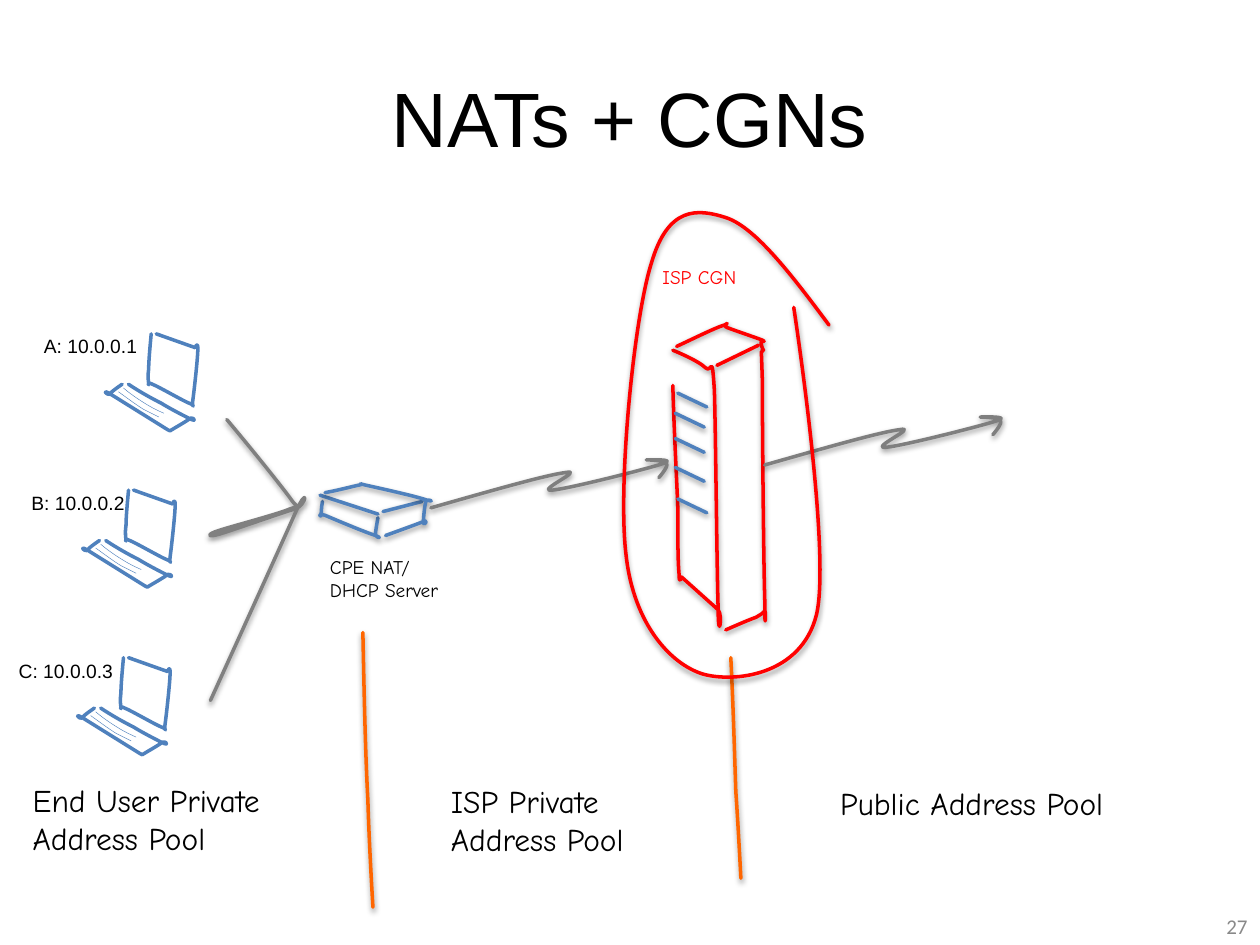
import pptx
import pptx.util
import pptx.dml.color
import pptx.enum.text
import pptx.oxml
import pptx.oxml.ns

PX = 9144
BLUE = "4F81BD"
RED = "FF0000"
GREY = "808080"
ORANGE = "FF6600"
BLACK = "000000"
color = pptx.dml.color.RGBColor.from_string
qn = pptx.oxml.ns.qn
NAMESPACE = pptx.oxml.ns.nsdecls("a")
SHADOW = (
    f'<a:outerShdw {NAMESPACE} blurRad="40000" dist="20000" dir="5400000" rotWithShape="0">'
    '<a:srgbClr val="000000"><a:alpha val="38000"/></a:srgbClr></a:outerShdw>'
)


def sketch(shapes, start, segments, ink, offset=(0, 0), weight=2, shadow=True):
    dx, dy = offset
    points = []
    for segment in segments:
        points += [(x + dx, y + dy) for x, y in zip(segment[::2], segment[1::2])]
    builder = shapes.build_freeform(start[0] + dx, start[1] + dy, scale=PX)
    builder.add_line_segments(points, close=False)
    stroke = builder.convert_to_shape()
    stroke.fill.background()
    stroke.line.color.rgb = color(ink)
    stroke.line.width = pptx.util.Pt(weight)
    stroke.shadow.inherit = False
    properties = stroke.element.spPr
    outline = properties.find(qn("a:ln"))
    outline.set("cap", "rnd")
    outline.append(pptx.oxml.parse_xml(f"<a:round {NAMESPACE}/>"))
    if shadow:
        properties.find(qn("a:effectLst")).append(pptx.oxml.parse_xml(SHADOW))
    steps = iter(list(properties.iter(qn("a:lnTo"))))
    for segment in segments:
        step = next(steps)
        if len(segment) == 6:
            curve = pptx.oxml.parse_xml(f"<a:cubicBezTo {NAMESPACE}/>")
            step.addprevious(curve)
            for handle in (step, next(steps), next(steps)):
                curve.append(handle[0])
                handle.getparent().remove(handle)


def write(box, lines, size, font, ink, align=pptx.enum.text.PP_ALIGN.LEFT, wrap=True):
    frame = box.text_frame
    frame.word_wrap = wrap
    for index, line in enumerate(lines):
        para = frame.add_paragraph() if index else frame.paragraphs[0]
        para.alignment = align
        span = para.add_run()
        span.text = line
        span.font.size = pptx.util.Pt(size)
        span.font.name = font
        span.font.color.rgb = color(ink)


deck = pptx.Presentation()
deck.slide_width = 1000 * PX
deck.slide_height = 750 * PX
page = deck.slides.add_slide(deck.slide_layouts[5])

title = page.shapes.title
title.left, title.top, title.width, title.height = 29 * PX, 30 * PX, 942 * PX, 125 * PX
title.text_frame.vertical_anchor = pptx.enum.text.MSO_ANCHOR.MIDDLE
write(title, ["NATs + CGNs"], 44, "Arial", BLACK, pptx.enum.text.PP_ALIGN.CENTER)

number = page.shapes.add_textbox(767 * PX, 715 * PX, 233 * PX, 40 * PX)
number.text_frame.vertical_anchor = pptx.enum.text.MSO_ANCHOR.MIDDLE
write(number, ["27"], 12, "Calibri", "898989", pptx.enum.text.PP_ALIGN.RIGHT)

laptop_strokes = [
    ((120, 265), [(119, 276, 118, 287, 118, 293), (117, 300, 118, 303, 118, 305),
                  (119, 307, 115, 302, 121, 305), (126, 307, 145, 318, 150, 320),
                  (156, 322, 152, 325, 153, 318), (154, 311, 157, 284, 157, 277),
                  (157, 270, 155, 276, 155, 276), (124, 265), (127, 266)], 2),
    ((102, 305), [(111, 311, 120, 316, 128, 320), (136, 325, 148, 331, 152, 333),
                  (156, 335, 154, 331, 151, 332), (149, 334, 138, 340, 135, 342),
                  (133, 341), (88, 313), (80, 308, 85, 314, 87, 313),
                  (88, 311, 97, 305, 97, 305)], 2),
    ((94, 311), [(101, 316, 109, 322, 114, 325), (120, 328, 126, 331, 126, 331)], 0.25),
    ((98, 308), [(105, 314, 113, 319, 118, 322), (123, 325, 130, 328, 130, 328)], 0.25),
]
for offset in [(-18, 124), (-22, 257), (0, 0)]:
    laptop = page.shapes.add_group_shape()
    for start, segments, weight in laptop_strokes:
        sketch(laptop.shapes, start, segments, BLUE, offset, weight, shadow=False)

router = page.shapes.add_group_shape()
router_strokes = [
    ((256, 398), [(255, 403, 255, 408, 255, 409), (255, 411, 251, 407, 258, 409),
                  (265, 412, 291, 423, 298, 425), (305, 428, 298, 427, 298, 424),
                  (298, 422, 300, 411, 300, 411)]),
    ((254, 393), [(300, 408)]),
    ((304, 406), [(335, 398)]),
    ((258, 391), [(269, 389, 280, 386, 285, 385), (291, 384, 281, 383, 290, 385),
                  (299, 387, 331, 394, 339, 397), (347, 399, 338, 395, 338, 398),
                  (337, 401, 336, 412, 336, 415), (336, 418, 341, 412, 336, 414),
                  (331, 416, 306, 425, 306, 425)]),
]
for start, segments in router_strokes:
    sketch(router.shapes, start, segments, BLUE)

home_wiring = [(201, 358, 221, 383, 230, 395), (238, 407, 240, 400, 230, 404),
               (221, 408, 183, 418, 174, 421), (164, 424, 164, 427, 174, 424),
               (184, 421, 224, 407, 234, 404), (244, 401, 245, 383, 234, 408),
               (223, 433, 167, 556, 167, 556)]
sketch(page.shapes, (180, 333), home_wiring, GREY)

cabinet_strokes = [
    ((534, 306), [(535, 342, 537, 378, 538, 403), (538, 428, 538, 446, 539, 456),
                  (539, 465, 541, 458, 541, 458), (570, 484),
                  (574, 488, 570, 512, 570, 483), (569, 454, 568, 342, 567, 310),
                  (565, 278, 565, 297, 560, 292), (554, 286, 534, 278, 534, 278)]),
    ((537, 275), [(552, 268, 568, 260, 575, 258), (581, 255, 572, 258, 577, 260),
                  (582, 262, 600, 268, 605, 270), (609, 272, 603, 270, 604, 272),
                  (604, 273, 605, 277, 606, 278), (606, 279, 605, 275, 605, 279),
                  (604, 283, 604, 268, 605, 301), (605, 334, 606, 447, 607, 478),
                  (607, 508, 608, 483, 607, 485), (605, 487, 605, 487, 600, 490),
                  (594, 492, 576, 500, 576, 500)]),
    ((569, 290), [(602, 274)]),
]
for start, segments in cabinet_strokes:
    sketch(page.shapes, start, segments, RED)
for x, y in [(538, 312), (536, 328), (536, 348), (536, 371), (538, 396)]:
    sketch(page.shapes, (x, y), [(x + 23, y + 11)], BLUE)

uplink = [(388, 390, 433, 377, 449, 375), (465, 372, 425, 390, 438, 389),
          (451, 388, 514, 372, 526, 368), (539, 364, 513, 365, 513, 365),
          (514, 365, 527, 365, 529, 368), (531, 370, 523, 379, 523, 379)]
for offset in [(0, 0), (265, -34)]:
    sketch(page.shapes, (342, 403), uplink, "7F7F7F", offset)

labels = [
    (25, 260, 96, 29, ["A: 10.0.0.1"], 11, "Arial", BLACK, False),
    (15, 385, 95, 29, ["B: 10.0.0.2"], 11, "Arial", BLACK, False),
    (5, 518, 96, 29, ["C: 10.0.0.3"], 11, "Arial", BLACK, False),
    (252, 436, 131, 66, ["CPE NAT/", "DHCP Server"], 11, "Comic Neue", BLACK, False),
    (516, 206, 104, 29, ["ISP CGN"], 11, "Comic Neue", RED, False),
    (657, 617, 274, 40, ["Public Address Pool"], 18, "Comic Neue", BLACK, False),
    (348, 616, 211, 71, ["ISP Private Address Pool"], 18, "Comic Neue", BLACK, True),
    (16, 615, 291, 71, ["End User Private Address Pool"], 18, "Comic Neue", BLACK, True),
]
for left, top, width, height, lines, size, font, ink, wrap in labels:
    box = page.shapes.add_textbox(left * PX, top * PX, width * PX, height * PX)
    write(box, lines, size, font, ink, wrap=wrap)

pool_borders = [
    ((288, 502), [(289, 550, 290, 598, 292, 635), (293, 671, 296, 720, 296, 720)]),
    ((580, 522), [(582, 561, 583, 599, 584, 628), (586, 657, 588, 697, 588, 697)]),
]
for start, segments in pool_borders:
    sketch(page.shapes, start, segments, ORANGE)

cgn_lasso = [(629, 219, 600, 181, 577, 173), (553, 165, 530, 164, 517, 209),
             (503, 253, 490, 386, 497, 441), (503, 495, 532, 527, 558, 535),
             (583, 542, 636, 536, 648, 488), (660, 439, 630, 244, 630, 244)]
sketch(page.shapes, (658, 258), cgn_lasso, RED)

deck.save("out.pptx")
